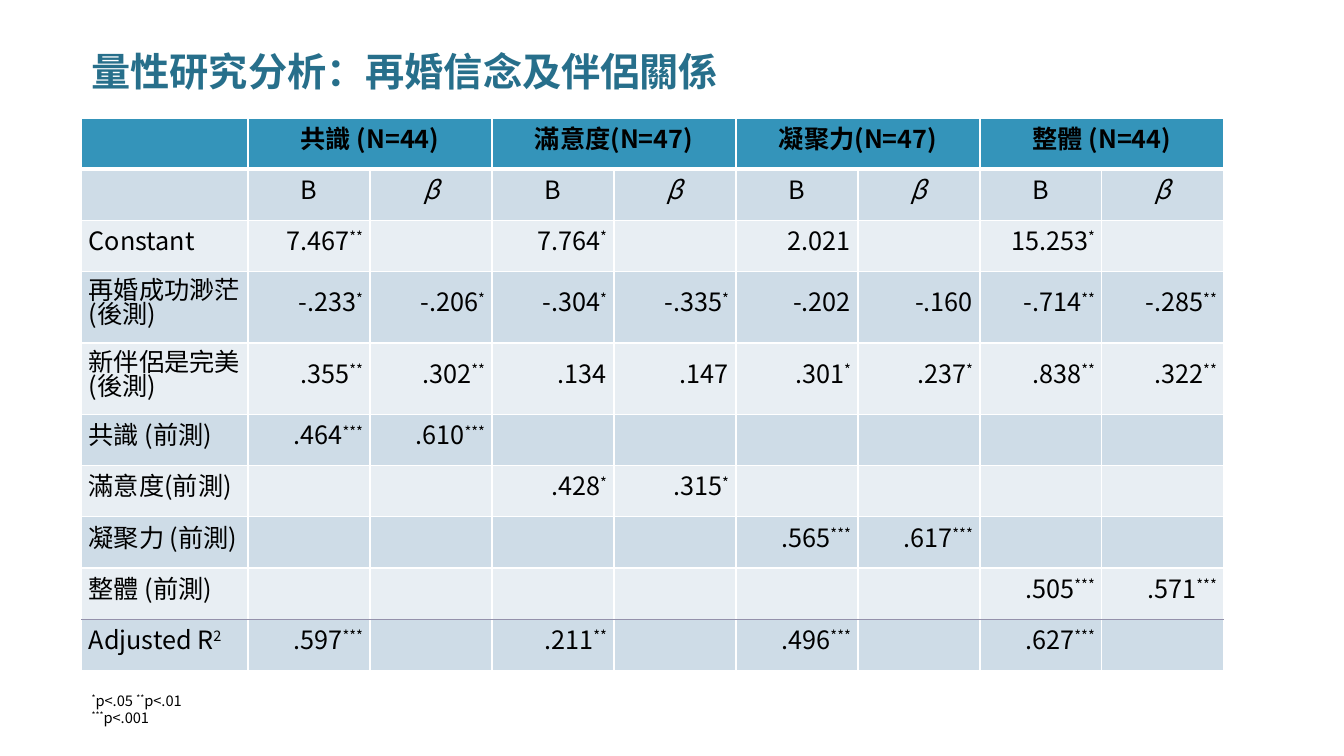
import pptx
import pptx.util
import pptx.dml.color
import pptx.enum.text
import pptx.oxml.ns
from lxml import etree

Inches, Pt = pptx.util.Inches, pptx.util.Pt
Align, Anchor = pptx.enum.text.PP_ALIGN, pptx.enum.text.MSO_ANCHOR
qn = pptx.oxml.ns.qn

THEME = {
    "title": "276F8B", "text": "000000", "header": "3494BA",
    "bands": ("CEDCE7", "E8EEF3"), "grid": "FFFFFF", "total": "9491AB",
    "title_font": "Cambria", "body_font": "Noto Sans CJK TC",
    "title_size": 28, "table_size": 18, "note_size": 10.5,
}


def write(paragraph, text, size, font="body_font", color="text", bold=False, italic=False):
    """Write text in which every second part between ^ marks is raised."""
    for index, part in enumerate(text.split("^")):
        if not part:
            continue
        run = paragraph.add_run()
        run.text = part
        run.font.size = Pt(THEME[size])
        run.font.bold, run.font.italic = bold, italic
        run.font.color.rgb = pptx.dml.color.RGBColor.from_string(THEME[color])
        run.font.name = THEME[font]
        props = run.font._element
        etree.SubElement(props, qn("a:ea")).set("typeface", THEME["body_font"])
        if index % 2:
            props.set("baseline", "30000")


def draw_border(cell, side, color, width):
    line = etree.SubElement(cell._tc.get_or_add_tcPr(), qn("a:ln" + side), w=str(Pt(width)))
    fill = etree.SubElement(line, qn("a:solidFill"))
    etree.SubElement(fill, qn("a:srgbClr"), val=color)


prs = pptx.Presentation()
prs.slide_width, prs.slide_height = Inches(13.33), Inches(7.5)
slide = prs.slides.add_slide(prs.slide_layouts[6])
left = Inches(0.81)

# Title
title = slide.shapes.add_textbox(left, Inches(0.18), Inches(11.2), Inches(0.81)).text_frame
title.word_wrap = True
title.vertical_anchor = Anchor.BOTTOM
title.paragraphs[0].line_spacing = 0.9
write(title.paragraphs[0], "量性研究分析：再婚信念及伴侶關係", "title_size", "title_font", "title", bold=True)

# Regression results: a label, then B and β for each of the four outcomes
outcomes = ["共識 (N=44)", "滿意度(N=47)", "凝聚力(N=47)", "整體 (N=44)"]
rows = [
    [""] + [text for outcome in outcomes for text in (outcome, "")],
    [""] + ["B", "β"] * len(outcomes),
    ["Constant", "7.467^**", "", "7.764^*", "", "2.021", "", "15.253^*", ""],
    ["再婚成功渺茫 (後測)", "-.233^*", "-.206^*", "-.304^*", "-.335^*",
     "-.202", "-.160", "-.714^**", "-.285^**"],
    ["新伴侶是完美 (後測)", ".355^**", ".302^**", ".134", ".147",
     ".301^*", ".237^*", ".838^**", ".322^**"],
    ["共識 (前測)", ".464^***", ".610^***", "", "", "", "", "", ""],
    ["滿意度(前測)", "", "", ".428^*", ".315^*", "", "", "", ""],
    ["凝聚力 (前測)", "", "", "", "", ".565^***", ".617^***", "", ""],
    ["整體 (前測)", "", "", "", "", "", "", ".505^***", ".571^***"],
    ["Adjusted R^2", ".597^***", "", ".211^**", "", ".496^***", "", ".627^***", ""],
]
belief_rows = (3, 4)
width, height, label_width, belief_height = 11.33, 5.48, 1.65, 0.71
value_width = (width - label_width) / (len(rows[0]) - 1)
row_height = (height - belief_height * len(belief_rows)) / (len(rows) - len(belief_rows))

results = slide.shapes.add_table(len(rows), len(rows[0]), left, Inches(1.17),
                                 Inches(width), Inches(height)).table
for c, column in enumerate(results.columns):
    column.width = Inches(value_width if c else label_width)
for r, row in enumerate(results.rows):
    row.height = Inches(belief_height if r in belief_rows else row_height)
for c in range(1, len(rows[0]), 2):
    results.cell(0, c).merge(results.cell(0, c + 1))

# Horizontal rules that differ from the thin white grid
grid_rule = (THEME["grid"], 1)
rules = {1: (THEME["grid"], 3), len(rows) - 1: (THEME["total"], 1)}

for r, texts in enumerate(rows):
    for c, text in enumerate(texts):
        cell = results.cell(r, c)
        draw_border(cell, "L", *grid_rule)
        draw_border(cell, "R", *grid_rule)
        draw_border(cell, "T", *rules.get(r, grid_rule))
        draw_border(cell, "B", *rules.get(r + 1, grid_rule))
        cell.fill.solid()
        band = THEME["bands"][(r - 1) % 2] if r else THEME["header"]
        cell.fill.fore_color.rgb = pptx.dml.color.RGBColor.from_string(band)
        cell.vertical_anchor = Anchor.MIDDLE
        cell.margin_left = cell.margin_right = Inches(0.07)
        cell.margin_top = cell.margin_bottom = 0
        if not text:
            continue
        paragraph = cell.text_frame.paragraphs[0]
        paragraph.line_spacing = Pt(17)
        if r < 2:
            paragraph.alignment = Align.CENTER
        elif c:
            paragraph.alignment = Align.RIGHT
        else:
            paragraph.alignment = Align.LEFT if r in belief_rows else Align.JUSTIFY
        write(paragraph, text, "table_size", bold=r == 0, italic=text == "β")

# Significance levels
levels = slide.shapes.add_textbox(left, Inches(6.82), Inches(1.58), Inches(0.27)).text_frame
levels.word_wrap = True
levels.paragraphs[0].line_spacing = Pt(12)
write(levels.paragraphs[0], "^*^p<.05 ^**^p<.01 ^***^p<.001", "note_size")

prs.save("out.pptx")
